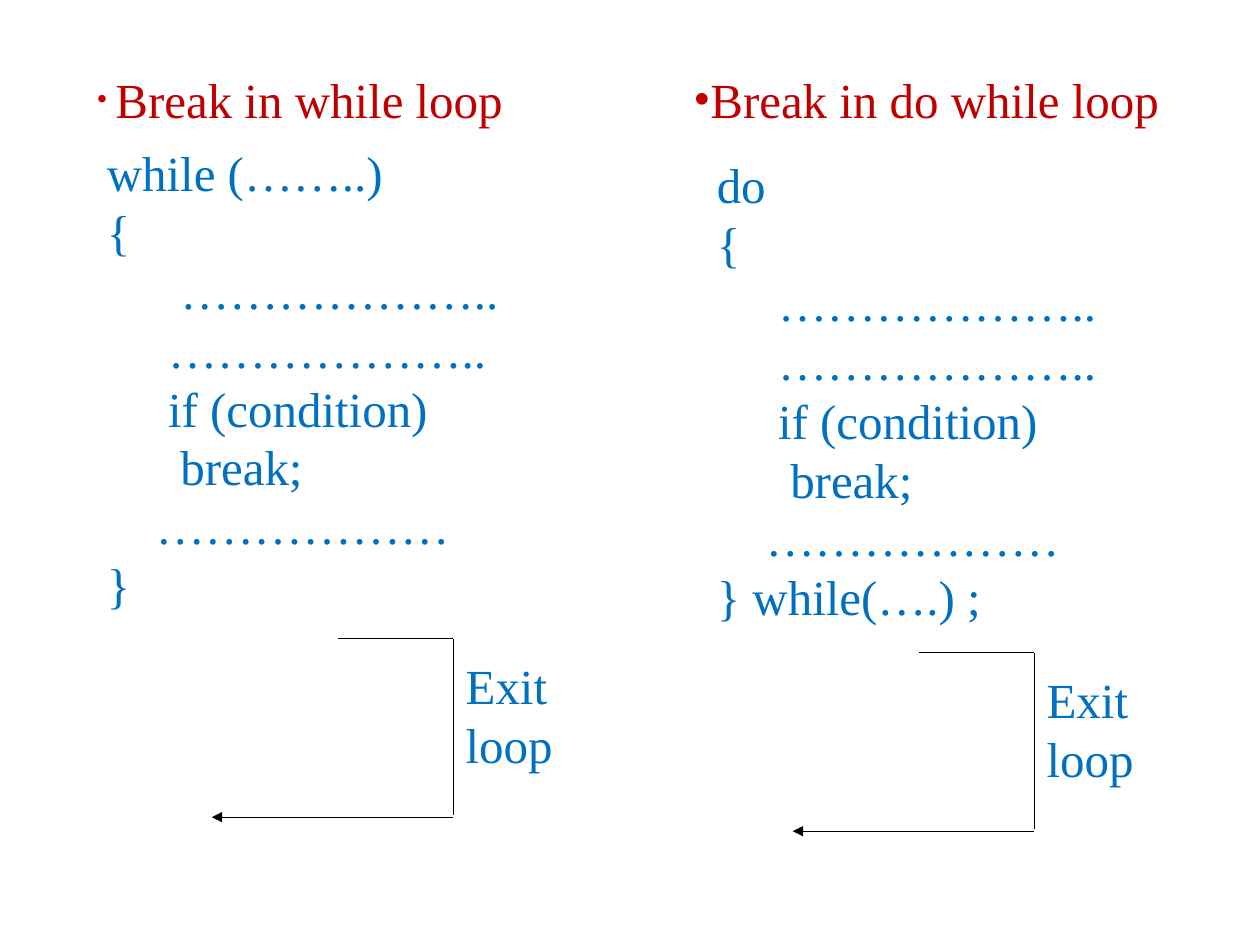
from lxml import etree
from pptx import Presentation
from pptx.dml.color import RGBColor
from pptx.enum.shapes import MSO_CONNECTOR
from pptx.enum.text import MSO_ANCHOR, MSO_AUTO_SIZE
from pptx.oxml.ns import qn
from pptx.util import Pt

STRAIGHT = MSO_CONNECTOR.STRAIGHT
TOP = MSO_ANCHOR.TOP
NO_AUTOFIT = MSO_AUTO_SIZE.NONE

COLORS = {"heading": "C00000", "code": "0070C0", "line": "000000"}
FONT = "Times New Roman"
TEXT_SIZE = 28
SPACE_WIDTH = TEXT_SIZE / 4

COLUMNS = [
    {
        "heading": "Break in while loop",
        "heading_box": (48, 36, 276, 41),
        "bullet": {"percent": 64, "hang": 10.8},
        "code": [
            (0, "while (……..)"),
            (0, "{"),
            (6, "……………….."),
            (5, "……………….."),
            (5, "if (condition)"),
            (6, "break;"),
            (4, "………………"),
            (0, "}"),
        ],
        "code_box": (54, 78, 307.5, 369),
        "exit_origin": (121, 365),
    },
    {
        "heading": "Break in do while loop",
        "heading_box": (389, 36, 307.5, 438),
        "bullet": {"percent": 100, "hang": 0},
        "code": [
            (0, "do"),
            (0, "{"),
            (5, "……………….."),
            (5, "……………….."),
            (5, "if (condition)"),
            (6, "break;"),
            (4, "………………"),
            (0, "} while(….) ;"),
        ],
        "code_box": (402.5, 85, 251, 379.5),
        "exit_origin": (453, 373),
    },
]

EXIT_TEXT = "Exit loop"
EXIT_BOX = (138, 6, 95, 62)
EXIT_LINES = [
    ((72, 0), (138, 0), False),
    ((138, 0), (138, 101), False),
    ((138, 102), (0, 102), True),
]


def write_lines(shape, lines, color):
    frame = shape.text_frame
    frame.word_wrap = True
    frame.auto_size = NO_AUTOFIT
    frame.vertical_anchor = TOP
    for index, (spaces, text) in enumerate(lines):
        para = frame.add_paragraph() if index else frame.paragraphs[0]
        para.space_before = Pt(0)
        if spaces:
            para._p.get_or_add_pPr().set("marL", str(Pt(spaces * SPACE_WIDTH)))
        span = para.add_run()
        span.text = text
        span.font.name = FONT
        span.font.size = Pt(TEXT_SIZE)
        span.font.color.rgb = RGBColor.from_string(COLORS[color])


def set_bullet(para, percent, hang):
    properties = para._p.get_or_add_pPr()
    properties.set("marL", str(Pt(hang)))
    properties.set("indent", str(-Pt(hang)))
    for tag, name, value in [
        ("a:buSzPct", "val", str(percent * 1000)),
        ("a:buFont", "typeface", FONT),
        ("a:buChar", "char", "•"),
    ]:
        etree.SubElement(properties, qn(tag)).set(name, value)


def add_heading(placeholder, column):
    placeholder.left, placeholder.top, placeholder.width, placeholder.height = map(
        Pt, column["heading_box"]
    )
    write_lines(placeholder, [(0, column["heading"])], "heading")
    set_bullet(placeholder.text_frame.paragraphs[0], **column["bullet"])


def add_text(slide, box, lines):
    write_lines(slide.shapes.add_textbox(*map(Pt, box)), lines, "code")


def add_line(slide, start, end, arrow):
    line = slide.shapes.add_connector(STRAIGHT, *map(Pt, start + end))
    line.line.color.rgb = RGBColor.from_string(COLORS["line"])
    line.line.width = Pt(0.75)
    if arrow:
        etree.SubElement(line.line._get_or_add_ln(), qn("a:tailEnd")).set("type", "triangle")
    etree.SubElement(line._element.spPr, qn("a:effectLst"))


def add_exit(slide, origin):
    left, top = origin
    for (x1, y1), (x2, y2), arrow in EXIT_LINES:
        add_line(slide, (left + x1, top + y1), (left + x2, top + y2), arrow)
    x, y, width, height = EXIT_BOX
    add_text(slide, (left + x, top + y, width, height), [(0, EXIT_TEXT)])


def main():
    deck = Presentation()
    deck.slide_width, deck.slide_height = Pt(720), Pt(540)
    slide = deck.slides.add_slide(deck.slide_layouts[3])
    title, *bodies = slide.placeholders
    title._element.getparent().remove(title._element)
    for column, body in zip(COLUMNS, bodies):
        add_heading(body, column)
        add_text(slide, column["code_box"], column["code"])
        add_exit(slide, column["exit_origin"])
    deck.save("out.pptx")


if __name__ == "__main__":
    main()
